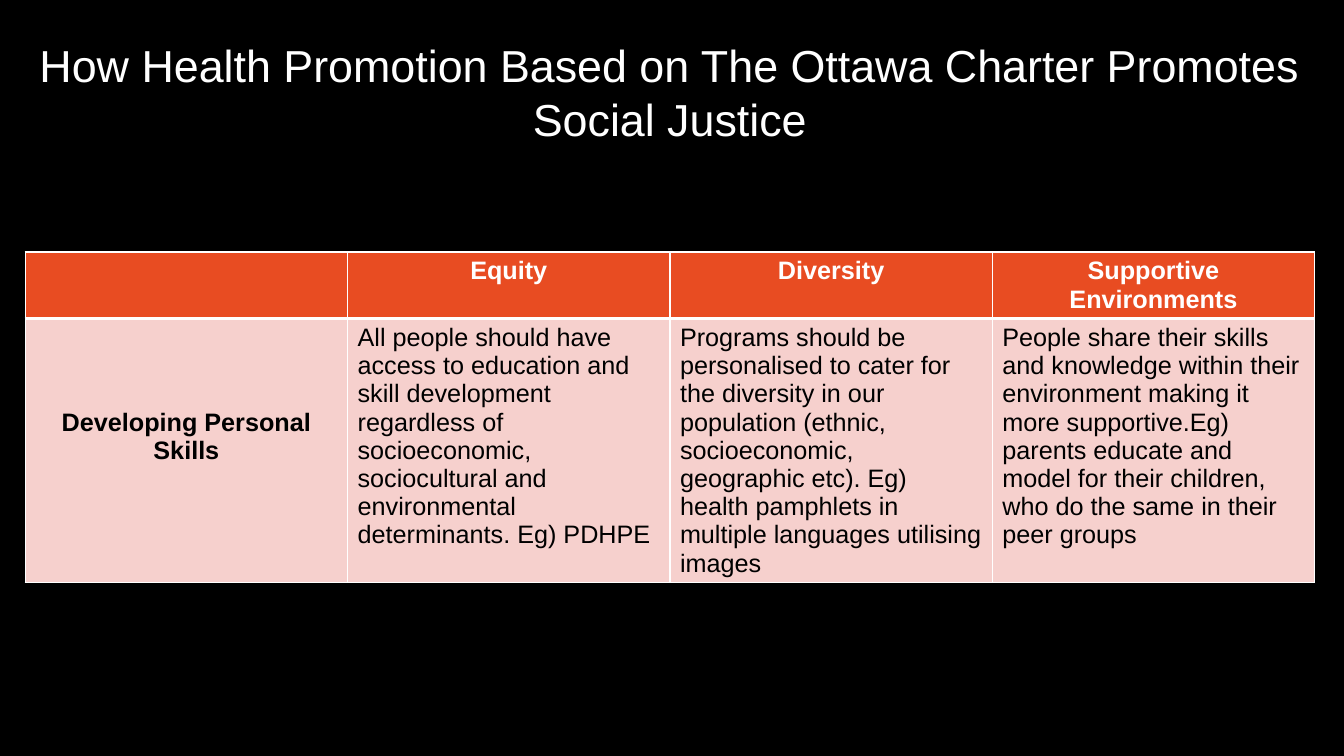
from dataclasses import dataclass

from lxml import etree
from pptx import Presentation
from pptx.dml.color import RGBColor
from pptx.enum.text import MSO_ANCHOR, PP_ALIGN
from pptx.oxml.ns import qn
from pptx.util import Inches, Pt


@dataclass(frozen=True)
class Theme:
    font: str = "Arial"
    black: str = "000000"
    white: str = "FFFFFF"
    header: str = "E84C22"
    body: str = "F6D0CD"
    title_size: int = 32
    table_size: int = 18


theme = Theme()


def format_text(paragraph, size, color, bold, alignment):
    paragraph.alignment = alignment
    font = paragraph.font
    if paragraph.runs:
        font = paragraph.runs[0].font
    font.name = theme.font
    font.size = Pt(size)
    font.bold = bold
    font.color.rgb = RGBColor.from_string(color)


def add_borders(cell, bottom_width):
    properties = cell._tc.get_or_add_tcPr()
    widths = {"lnL": 1, "lnR": 1, "lnT": 1, "lnB": bottom_width}
    for index, (side, width) in enumerate(widths.items()):
        line = etree.Element(qn(f"a:{side}"), w=str(Pt(width)))
        fill = etree.SubElement(line, qn("a:solidFill"))
        etree.SubElement(fill, qn("a:srgbClr"), val=theme.white)
        properties.insert(index, line)


presentation = Presentation()
presentation.slide_width = Inches(13.33)
presentation.slide_height = Inches(7.5)
slide = presentation.slides.add_slide(presentation.slide_layouts[5])
slide.background.fill.solid()
slide.background.fill.fore_color.rgb = RGBColor.from_string(theme.black)

title = slide.shapes.title
title.left, title.top = Inches(0.25), Inches(0.25)
title.width, title.height = Inches(12.79), Inches(1.32)
title.text_frame.text = "How Health Promotion Based on The Ottawa Charter Promotes Social Justice"
title.text_frame.word_wrap = True
title.text_frame.vertical_anchor = MSO_ANCHOR.MIDDLE
format_text(title.text_frame.paragraphs[0], theme.title_size, theme.white, False, PP_ALIGN.CENTER)

rows = [
    ["", "Equity", "Diversity", "Supportive Environments"],
    [
        "Developing Personal Skills",
        "All people should have access to education and skill development regardless of "
        "socioeconomic, sociocultural and environmental determinants. Eg) PDHPE",
        "Programs should be personalised to cater for the diversity in our population "
        "(ethnic, socioeconomic, geographic etc). Eg) health pamphlets in multiple "
        "languages utilising images",
        "People share their skills and knowledge within their environment making it more "
        "supportive.Eg) parents educate and model for their children, who do the same in "
        "their peer groups",
    ],
]
table = slide.shapes.add_table(
    len(rows), len(rows[0]), Inches(0.25), Inches(2.5), Inches(12.79), Inches(3.27)
).table
table.rows[0].height = Inches(0.66)
table.rows[1].height = Inches(2.61)

for row_index, row in enumerate(rows):
    for column_index, text in enumerate(row):
        is_header = row_index == 0
        is_label = is_header or column_index == 0
        cell = table.cell(row_index, column_index)
        cell.text_frame.text = text
        cell.fill.solid()
        cell.fill.fore_color.rgb = RGBColor.from_string(theme.header if is_header else theme.body)
        format_text(
            cell.text_frame.paragraphs[0],
            theme.table_size,
            theme.white if is_header else theme.black,
            is_label,
            PP_ALIGN.CENTER if is_label else PP_ALIGN.LEFT,
        )
        add_borders(cell, 3 if is_header else 1)

table.cell(1, 0).margin_top = Inches(0.89)

presentation.save("out.pptx")
